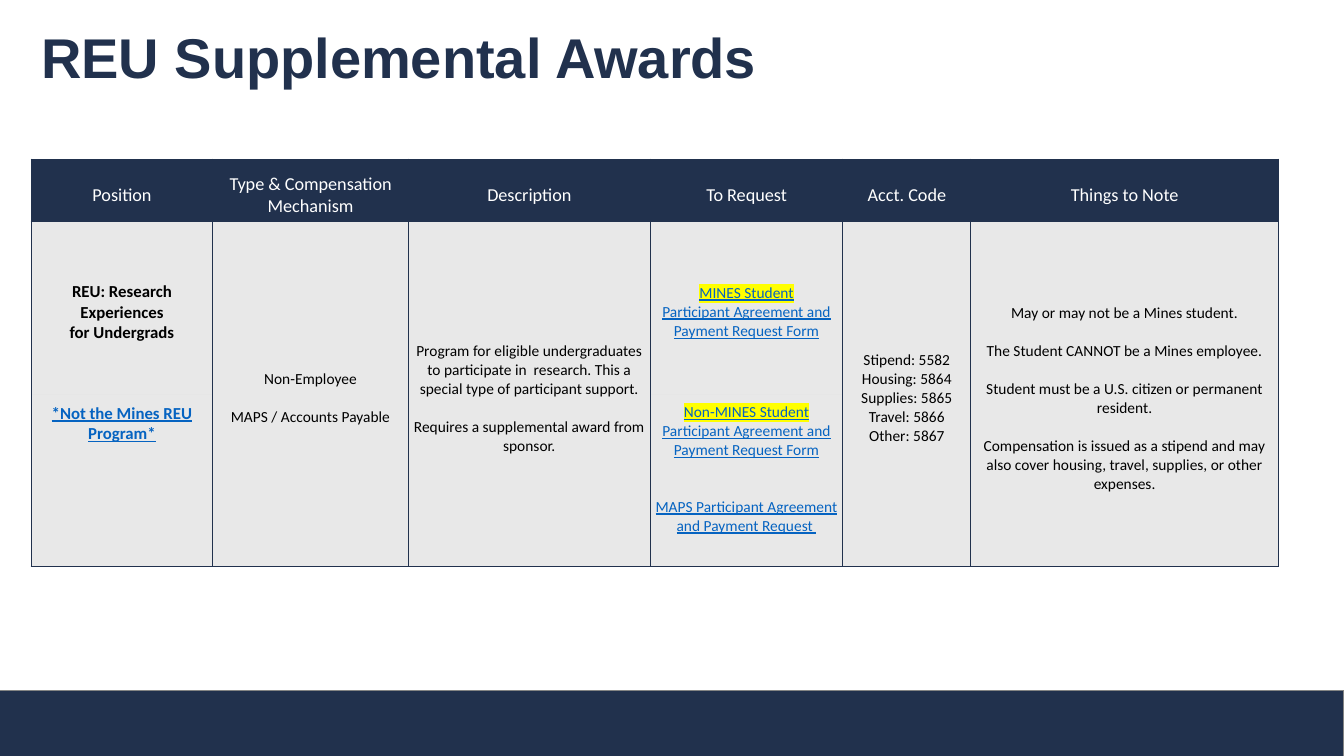
import dataclasses

import lxml.etree
import pptx
import pptx.dml.color
import pptx.enum.shapes
import pptx.enum.text
import pptx.oxml.ns
import pptx.util
from pptx.util import Inches

RGBColor = pptx.dml.color.RGBColor
NAVY = RGBColor(0x21, 0x31, 0x4D)
GRAY_LINE = RGBColor(0x84, 0x85, 0x84)
CELL_GRAY = RGBColor(0xBF, 0xBF, 0xBF)
WHITE = RGBColor(0xFF, 0xFF, 0xFF)
BLACK = RGBColor(0x00, 0x00, 0x00)
LINK_BLUE = RGBColor(0x05, 0x63, 0xC1)
YELLOW = RGBColor(0xFF, 0xFF, 0x00)

LINE_HEIGHT = 13.43  # points, one line of 11 pt Calibri
COLUMN_WIDTHS = [1.8, 1.94, 2.4, 1.91, 1.27, 3.05]
ROW_HEIGHTS = [0.62, 1.71, 1.71]
HEADERS = ["Position", "Type & Compensation Mechanism", "Description",
           "To Request", "Acct. Code", "Things to Note"]


@dataclasses.dataclass
class Line:
    text: str
    lines_before: int = 0
    highlighted: str = ""


@dataclasses.dataclass
class Style:
    size: int = 11
    color: RGBColor = BLACK
    bold: bool = False
    underline: bool = False


HEADER_STYLE = Style(13, WHITE)
BODY_STYLE = Style()
POSITION_STYLE = Style(12, BLACK, bold=True)
POSITION_LINK_STYLE = Style(12, LINK_BLUE, bold=True, underline=True)
LINK_STYLE = Style(11, LINK_BLUE, underline=True)

# Cells that span both body rows, by column
MERGED_CELLS = {
    1: [Line("Non-Employee"), Line("MAPS / Accounts Payable", 1)],
    2: [Line("Program for eligible undergraduates to participate in  research. "
             "This a special type of participant support."),
        Line("Requires a supplemental award from sponsor.", 1)],
    4: [Line("Stipend: 5582"), Line("Housing: 5864"), Line("Supplies: 5865"),
        Line("Travel: 5866"), Line("Other: 5867")],
    5: [Line("May or may not be a Mines student."),
        Line("The Student CANNOT be a Mines employee.", 1),
        Line("Student must be a U.S. citizen or permanent resident.", 1),
        Line("Compensation is issued as a stipend and may also cover housing, "
             "travel, supplies, or other expenses.", 1)],
}
# Cells of a single body row, by row and column
SINGLE_CELLS = {
    (1, 0): ([Line("REU: Research Experiences"), Line("for Undergrads")], POSITION_STYLE),
    (2, 0): ([Line("*Not the Mines REU Program*")], POSITION_LINK_STYLE),
    (1, 3): ([Line("", highlighted="MINES Student"),
              Line("Participant Agreement and Payment Request Form")], LINK_STYLE),
    (2, 3): ([Line(" Participant Agreement and Payment Request Form",
                   highlighted="Non-MINES Student"),
              Line("MAPS Participant Agreement and Payment Request ", 2)], LINK_STYLE),
}


def add_xml(parent, tag, **attributes):
    return lxml.etree.SubElement(parent, pptx.oxml.ns.qn(tag), **attributes)


def format_run(run, style):
    font = run.font
    font.name = "Calibri"
    font.size = pptx.util.Pt(style.size)
    font.bold = style.bold
    font.underline = style.underline
    font.color.rgb = style.color


def highlight_run(run):
    properties = run.font._element
    highlight = add_xml(properties, "a:highlight")
    add_xml(highlight, "a:srgbClr", val=str(YELLOW))
    properties.find(pptx.oxml.ns.qn("a:solidFill")).addnext(highlight)


def write_cell(cell, lines, style, anchor=pptx.enum.text.MSO_ANCHOR.MIDDLE):
    cell.vertical_anchor = anchor
    for number, line in enumerate(lines):
        text_frame = cell.text_frame
        paragraph = text_frame.add_paragraph() if number else text_frame.paragraphs[0]
        paragraph.alignment = pptx.enum.text.PP_ALIGN.CENTER
        if line.lines_before:
            paragraph.space_before = pptx.util.Pt(line.lines_before * LINE_HEIGHT)
        paragraph.text = line.highlighted or line.text
        if line.highlighted and line.text:
            paragraph.add_run().text = line.text
        for run in paragraph.runs:
            format_run(run, style)
        if line.highlighted:
            highlight_run(paragraph.runs[0])


def set_borders(cell, sides):
    properties = cell._tc.get_or_add_tcPr()
    for position, side in enumerate("LRTB"):
        border = add_xml(properties, f"a:ln{side}", w=str(pptx.util.Pt(1)))
        if side in sides:
            fill = add_xml(border, "a:solidFill")
            add_xml(fill, "a:srgbClr", val=str(NAVY))
        else:
            add_xml(border, "a:noFill")
        properties.insert(position, border)


def format_cell(cell, row, column):
    cell.margin_left = cell.margin_right = cell.margin_bottom = 0
    cell.margin_top = Inches(0.09)
    cell.fill.solid()
    cell.fill.fore_color.rgb = CELL_GRAY if row else NAVY
    if row:
        color = cell._tc.tcPr.find(".//" + pptx.oxml.ns.qn("a:srgbClr"))
        add_xml(color, "a:alpha", val="35000")
    if row == 0 or column in MERGED_CELLS:
        set_borders(cell, "LRTB")
    else:
        set_borders(cell, "LRT" if row == 1 else "LRB")


def add_awards_table(slide):
    frame = slide.shapes.add_table(
        len(ROW_HEIGHTS), len(COLUMN_WIDTHS), Inches(0.31), Inches(1.58),
        Inches(sum(COLUMN_WIDTHS)), Inches(sum(ROW_HEIGHTS)))
    table = frame.table
    table.first_row = False
    table.horz_banding = False
    for column, width in zip(table.columns, COLUMN_WIDTHS):
        column.width = Inches(width)
    for row, height in zip(table.rows, ROW_HEIGHTS):
        row.height = Inches(height)

    for row in range(len(ROW_HEIGHTS)):
        for column in range(len(COLUMN_WIDTHS)):
            format_cell(table.cell(row, column), row, column)
    for column, header in enumerate(HEADERS):
        write_cell(table.cell(0, column), [Line(header)], HEADER_STYLE)
    for column, lines in MERGED_CELLS.items():
        table.cell(1, column).merge(table.cell(2, column))
        write_cell(table.cell(1, column), lines, BODY_STYLE)
    for (row, column), (lines, style) in SINGLE_CELLS.items():
        anchor = pptx.enum.text.MSO_ANCHOR.MIDDLE if row == 1 else pptx.enum.text.MSO_ANCHOR.TOP
        write_cell(table.cell(row, column), lines, style, anchor)


def add_footer_band(slide):
    band = slide.shapes.add_shape(
        pptx.enum.shapes.MSO_SHAPE.RECTANGLE,
        Inches(-0.01), Inches(6.85), Inches(13.34), Inches(0.66))
    band.shadow.inherit = False
    band.fill.solid()
    band.fill.fore_color.rgb = NAVY
    band.line.color.rgb = GRAY_LINE
    band.line.width = pptx.util.Pt(1)


def add_title(slide, text):
    box = slide.shapes.add_textbox(Inches(0.31), Inches(0.2), Inches(11.5), Inches(0.8))
    text_frame = box.text_frame
    text_frame.word_wrap = True
    text_frame.vertical_anchor = pptx.enum.text.MSO_ANCHOR.MIDDLE
    text_frame.text = text
    paragraph = text_frame.paragraphs[0]
    paragraph.line_spacing = 0.9
    font = paragraph.runs[0].font
    font.name = "Arial"
    font.size = pptx.util.Pt(40)
    font.bold = True
    font.color.rgb = NAVY


def main():
    presentation = pptx.Presentation()
    presentation.slide_width = Inches(13.33)
    presentation.slide_height = Inches(7.5)
    slide = presentation.slides.add_slide(presentation.slide_layouts[6])
    add_footer_band(slide)
    add_title(slide, "REU Supplemental Awards")
    add_awards_table(slide)
    presentation.save("out.pptx")


if __name__ == "__main__":
    main()
